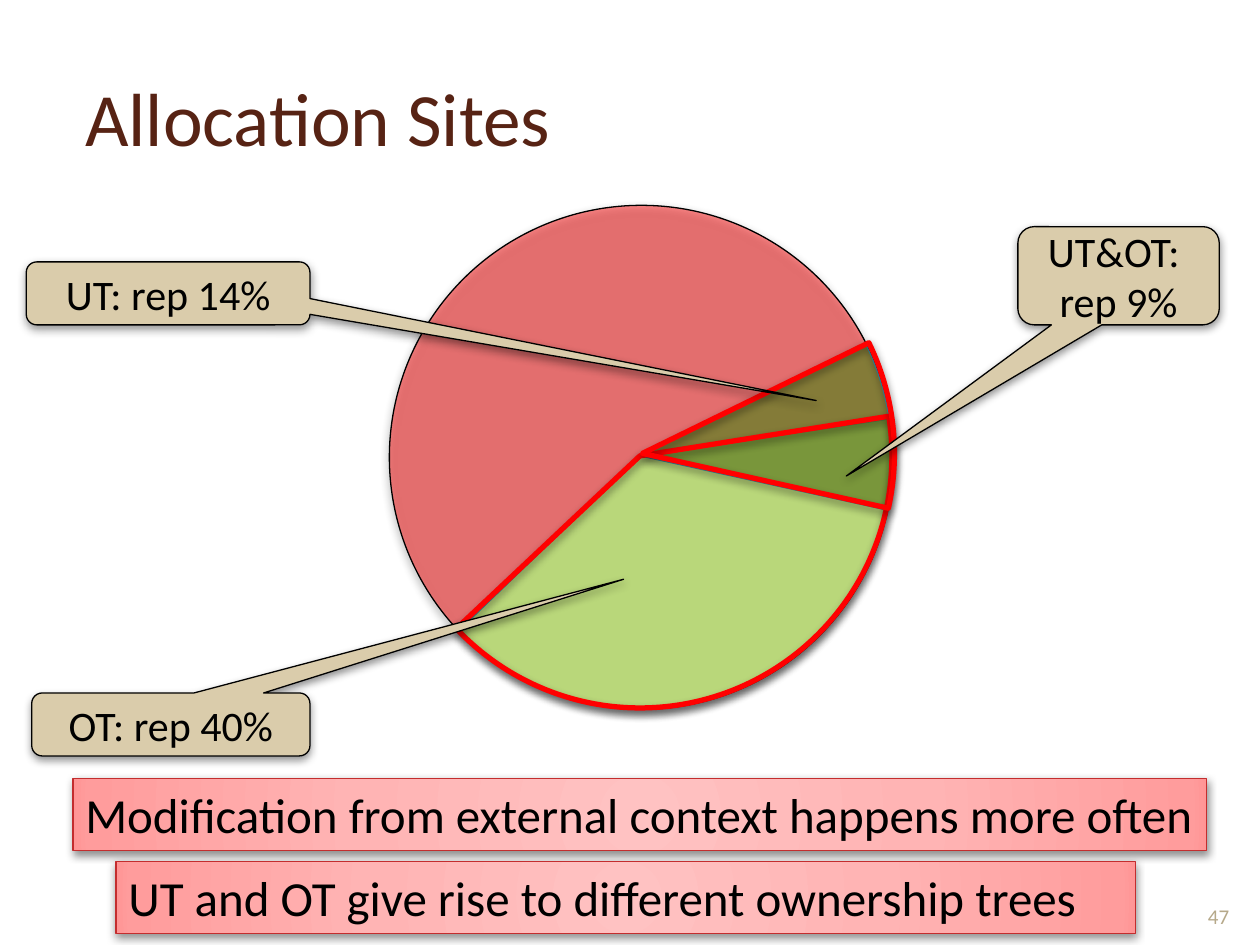
from lxml import etree
from pptx import Presentation
from pptx.dml.color import RGBColor
from pptx.enum.shapes import MSO_SHAPE
from pptx.enum.text import MSO_ANCHOR, MSO_AUTO_SIZE, PP_ALIGN
from pptx.oxml import parse_xml
from pptx.util import Cm, Pt

ELLIPSE, PIE, RECTANGLE = MSO_SHAPE.OVAL, MSO_SHAPE.PIE, MSO_SHAPE.RECTANGLE
CALLOUT = MSO_SHAPE.ROUNDED_RECTANGULAR_CALLOUT
MIDDLE, BOTTOM = MSO_ANCHOR.MIDDLE, MSO_ANCHOR.BOTTOM
TOP = MSO_ANCHOR.TOP
LEFT, CENTER = PP_ALIGN.LEFT, PP_ALIGN.CENTER
FIT_SHAPE = MSO_AUTO_SIZE.SHAPE_TO_FIT_TEXT

NS = "http://schemas.openxmlformats.org/drawingml/2006/main"
DIAMETER = 10.16
BANNER_STOPS = [(0, "FFC2C2"), (50, "FFB4B4"), (97, "FF9C9C"), (100, "FF9595")]


def color(value):
    return RGBColor.from_string(value)


def add_shadow(shape):
    shape._element.spPr.append(parse_xml(
        f'<a:effectLst xmlns:a="{NS}"><a:outerShdw blurRad="{Pt(5)}" dist="{Pt(2)}" '
        'dir="5400000" rotWithShape="0"><a:srgbClr val="000000">'
        '<a:alpha val="43000"/></a:srgbClr></a:outerShdw></a:effectLst>'))


def fill_radial(shape, stops):
    """Replace the fill by a circular gradient that starts in the centre."""
    shape.fill.background()
    marks = "".join(f'<a:gs pos="{pos * 1000}"><a:srgbClr val="{value}"/></a:gs>'
                    for pos, value in stops)
    gradient = parse_xml(
        f'<a:gradFill xmlns:a="{NS}"><a:gsLst>{marks}</a:gsLst><a:path path="circle">'
        '<a:fillToRect l="50000" t="50000" r="50000" b="50000"/></a:path></a:gradFill>')
    properties = shape._element.spPr
    properties.replace(properties.find(f"{{{NS}}}noFill"), gradient)


def add_form(page, kind, box, fill=None, opacity=100, line="000000", width=0.75,
             shadow=True):
    shape = page.shapes.add_shape(kind, *map(Cm, box))
    if fill:
        shape.fill.solid()
        shape.fill.fore_color.rgb = color(fill)
        if opacity < 100:
            solid = shape._element.spPr.find(f"{{{NS}}}solidFill")
            etree.SubElement(solid[0], f"{{{NS}}}alpha", val=str(opacity * 1000))
    else:
        shape.fill.background()
    shape.line.color.rgb = color(line)
    shape.line.width = Pt(width)
    if shadow:
        add_shadow(shape)
    else:
        shape.shadow.inherit = False
    return shape


def write(shape, lines, size, value="000000", align=CENTER, **frame_format):
    frame = shape.text_frame
    for name, setting in {"word_wrap": True, "vertical_anchor": MIDDLE,
                          **frame_format}.items():
        setattr(frame, name, setting)
    for index, line in enumerate(lines):
        para = frame.add_paragraph() if index else frame.paragraphs[0]
        para.alignment = align
        span = para.add_run()
        span.text = line
        for name, setting in {"size": Pt(size), "name": "Calibri"}.items():
            setattr(span.font, name, setting)
        span.font.color.rgb = color(value)


def add_label(page, box, text, size, value, align, anchor):
    label = page.shapes.add_textbox(*map(Cm, box))
    write(label, [text], size, value, align, vertical_anchor=anchor)


def add_slice(page, left, top, start, end, rotation=0, **look):
    """Draw a slice between two clockwise angles, in degrees from the right."""
    piece = add_form(page, PIE, (left, top, DIAMETER, DIAMETER), **look)
    piece.rotation = rotation
    for index, angle in enumerate((start, end)):
        piece.adjustments[index] = (angle - rotation) % 360 * 0.6


def add_shares(page, left, top):
    add_form(page, ELLIPSE, (left + 0.03, top + 0.03, DIAMETER, DIAMETER),
             fill="FF0000", opacity=46)
    add_slice(page, left, top, 351.6, 136.02, 180, fill="B9D77A", line="3891A7")
    add_slice(page, left, top, 333.73, 12.38, fill="638026", opacity=74,
              line="3891A7", shadow=False)
    outline = {"line": "FF0000", "width": 3}
    add_slice(page, left, top, 350.94, 136.75, 180, **outline)
    add_slice(page, left + 0.05, top - 0.05, 333.95, 12.56, 146.8, **outline)


def add_callout(page, box, tip, lines):
    """Tip is the offset from the centre in widths and heights of the box."""
    callout = add_form(page, CALLOUT, box, fill="DACCAB")
    for index, value in enumerate((*tip, 0.167)):
        callout.adjustments[index] = value
    write(callout, lines, 24)


def add_banner(page, box, text, wrap):
    banner = add_form(page, RECTANGLE, box, line="C32D2E")
    fill_radial(banner, BANNER_STOPS)
    write(banner, [text], 28, align=LEFT, vertical_anchor=TOP, word_wrap=wrap,
          auto_size=FIT_SHAPE)


def main():
    deck = Presentation()
    deck.slide_width, deck.slide_height = Cm(25.4), Cm(19.05)
    page = deck.slides.add_slide(deck.slide_layouts[6])

    add_label(page, (1.47, 0.76, 22.53, 3.18), "Allocation Sites", 43, "572314",
              LEFT, MIDDLE)
    add_label(page, (23.93, 17.53, 1.27, 1.32), "47", 12, "B6A98A", CENTER, BOTTOM)
    add_shares(page, 7.82, 4.11)
    add_callout(page, (0.64, 13.97, 5.61, 1.27), (1.627, -2.305), ["OT: rep 40%"])
    add_callout(page, (0.53, 5.28, 5.72, 1.27), (2.284, 1.701), ["UT: rep 14%"])
    add_banner(page, (1.47, 15.7, 22.86, 1.45),
               "Modification from external context happens more often", True)
    add_callout(page, (20.52, 4.57, 4.06, 1.98), (-1.352, 2.039),
                ["UT&OT: ", "rep 9%"])
    add_banner(page, (2.34, 17.37, 20.55, 1.45),
               "UT and OT give rise to different ownership trees", False)
    deck.save("out.pptx")


if __name__ == "__main__":
    main()
